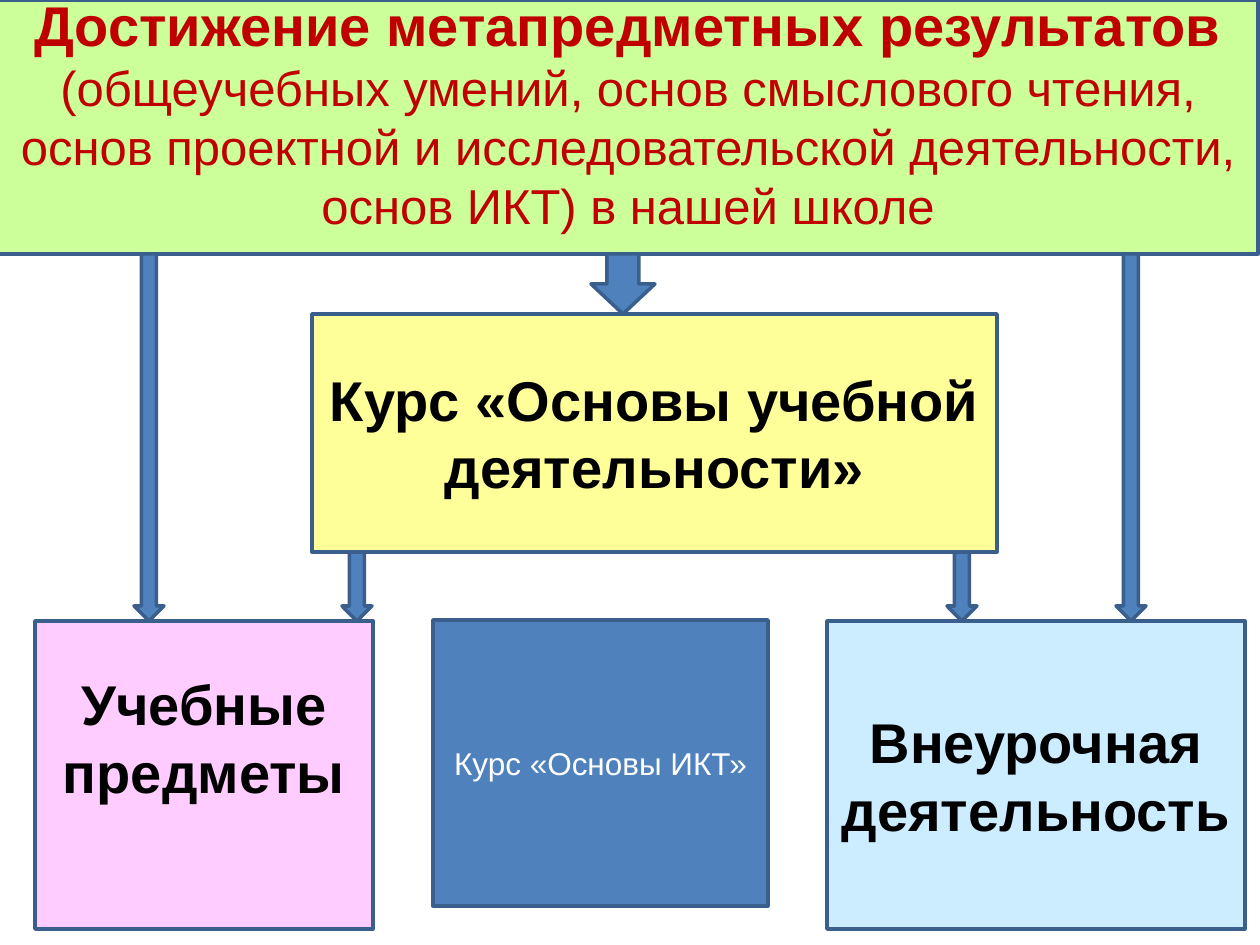
from pptx import Presentation
from pptx import util as u
from pptx.dml.color import RGBColor
from pptx.enum import shapes, text

EMU_PER_PX = 914400 / 126
COLOURS = {
    "header": "CCFF99", "course": "FFFF99", "subjects": "FFCCFF",
    "extra": "CCECFF", "blue": "4F81BD", "outline": "3A5F8C",
    "red": "C00000", "black": "000000", "white": "FFFFFF",
}
HEADER_BOTTOM, COURSE_TOP, COURSE_BOTTOM, BOXES_TOP = 254, 314, 552, 621


def px(length):
    return u.Emu(round(length * EMU_PER_PX))


def colour(name):
    return RGBColor.from_string(COLOURS[name])


def set_all(target, values):
    for name, value in values.items():
        setattr(target, name, value)


def paint(shape, fill):
    shape.fill.solid()
    shape.fill.fore_color.rgb = colour(fill)
    shape.line.color.rgb = colour("outline")
    shape.line.width = u.Pt(2)


def write(shape, runs, ink, **frame_values):
    """Fill a shape with one centred paragraph of (words, size, bold) runs."""
    frame = shape.text_frame
    set_all(frame, {"word_wrap": True, "auto_size": text.MSO_AUTO_SIZE.NONE,
                    "vertical_anchor": text.MSO_ANCHOR.MIDDLE, **frame_values})
    paragraph = frame.paragraphs[0]
    paragraph.alignment = text.PP_ALIGN.CENTER
    for words, size, bold in runs:
        run = paragraph.add_run()
        run.text = words
        set_all(run.font, {"name": "Arial", "size": u.Pt(size), "bold": bold})
        run.font.color.rgb = colour(ink)


def add_header(slide):
    title = slide.shapes.title
    set_all(title, {"left": px(-2), "top": px(0),
                    "width": px(1260), "height": px(HEADER_BOTTOM)})
    paint(title, "header")
    runs = [
        ("Достижение метапредметных результатов ", 32, True),
        ("(общеучебных умений, основ смыслового чтения, основ проектной и "
         "исследовательской деятельности, основ ИКТ) в нашей школе", 28, False),
    ]
    write(title, runs, "red", margin_top=0, margin_bottom=px(30))


def add_preset(slide, kind, box, fill):
    shape = slide.shapes.add_shape(kind, *map(px, box))
    shape.shadow.inherit = False
    paint(shape, fill)
    return shape


def add_box(slide, box, fill, words, size=32, bold=True, ink="black", **frame_values):
    shape = add_preset(slide, shapes.MSO_SHAPE.RECTANGLE, box, fill)
    write(shape, [(words, size, bold)], ink, **frame_values)


def add_arrow(slide, centre, top, bottom, width=30):
    box = (centre - width / 2, top, width, bottom - top)
    add_preset(slide, shapes.MSO_SHAPE.DOWN_ARROW, box, "blue")


def main():
    presentation = Presentation()
    set_all(presentation, {"slide_width": u.Inches(10), "slide_height": u.Inches(7.5)})
    slide = presentation.slides.add_slide(presentation.slide_layouts[5])

    add_header(slide)

    # Course in the middle, three boxes below
    add_box(slide, (312, COURSE_TOP, 685, COURSE_BOTTOM - COURSE_TOP), "course",
            "Курс «Основы учебной деятельности»")
    add_box(slide, (35, BOXES_TOP, 338, 308), "subjects", "Учебные предметы",
            margin_bottom=px(82))
    add_box(slide, (827, BOXES_TOP, 418, 308), "extra", "Внеурочная деятельность")
    add_box(slide, (433, 620, 335, 286), "blue", "Курс «Основы ИКТ»",
            size=18, bold=False, ink="white")

    # Arrows from the header and from the course
    add_arrow(slide, 623, HEADER_BOTTOM, COURSE_TOP, width=64)
    for centre in (149, 1131):
        add_arrow(slide, centre, HEADER_BOTTOM, BOXES_TOP)
    for centre in (357, 962):
        add_arrow(slide, centre, COURSE_BOTTOM, BOXES_TOP)

    presentation.save("out.pptx")


if __name__ == "__main__":
    main()
